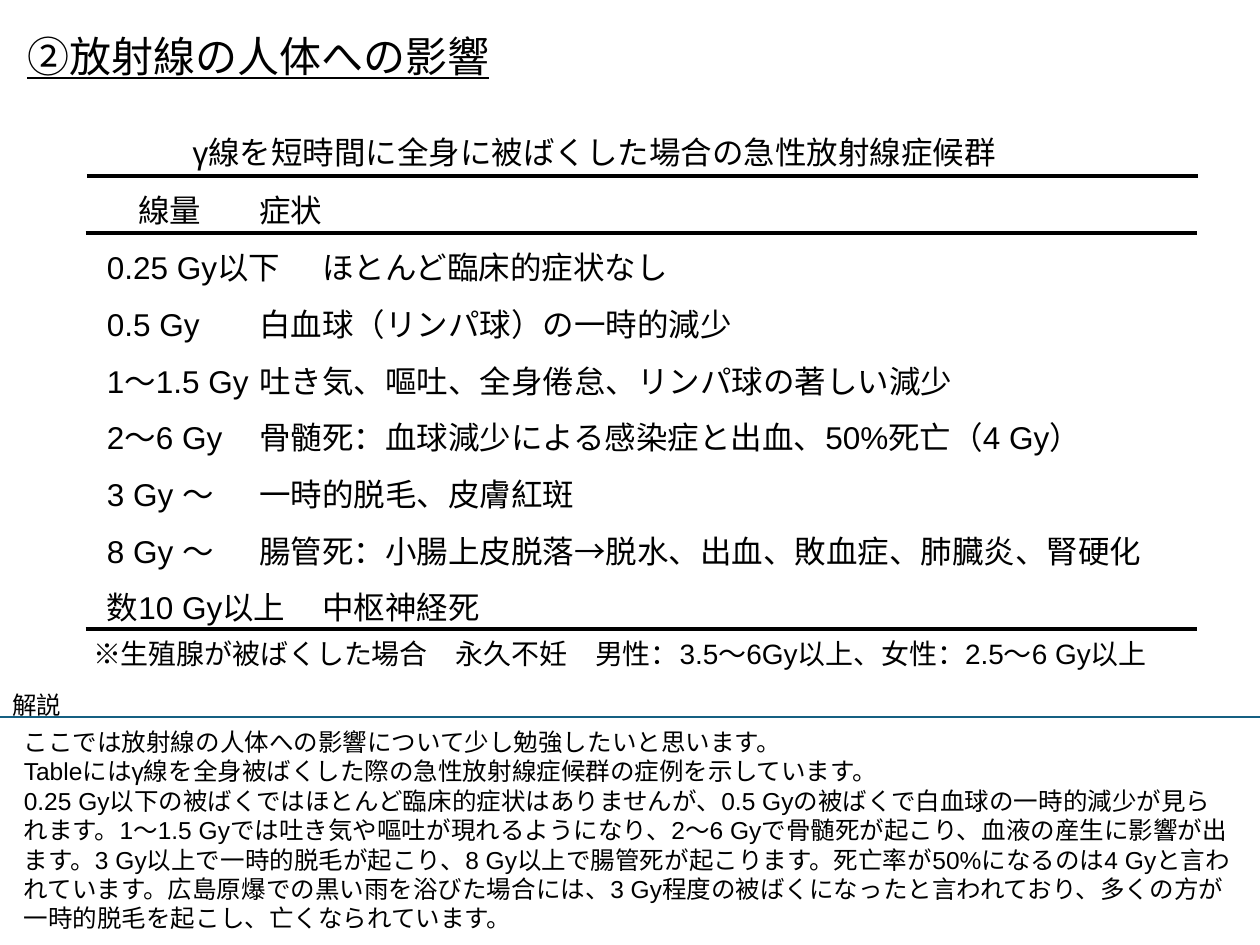
from pptx import Presentation
from pptx.dml.color import RGBColor
from pptx.enum.shapes import MSO_CONNECTOR as Connector
from pptx.enum.text import MSO_ANCHOR as Anchor, MSO_AUTO_SIZE as AutoSize
from pptx.oxml.ns import qn
from pptx.util import Inches, Pt
from lxml.etree import SubElement

COLORS = {"text": "000000", "rule": "000000", "divider": "156082"}
FONT = "Arial"

HEADER = "線量\t症状"
SYMPTOMS = [
    ("0.25 Gy以下", "ほとんど臨床的症状なし"),
    ("0.5 Gy", "白血球（リンパ球）の一時的減少"),
    ("1～1.5 Gy", "吐き気、嘔吐、全身倦怠、リンパ球の著しい減少"),
    ("2～6 Gy", "骨髄死：血球減少による感染症と出血、50%死亡（4 Gy）"),
    ("3 Gy ～", "一時的脱毛、皮膚紅斑"),
    ("8 Gy ～", "腸管死：小腸上皮脱落→脱水、出血、敗血症、肺臓炎、腎硬化"),
    ("数10 Gy以上", "中枢神経死"),
]
COMMENTARY = [
    "ここでは放射線の人体への影響について少し勉強したいと思います。",
    "Tableにはγ線を全身被ばくした際の急性放射線症候群の症例を示しています。",
    "0.25 Gy以下の被ばくではほとんど臨床的症状はありませんが、"
    "0.5 Gyの被ばくで白血球の一時的減少が見られます。"
    "1～1.5 Gyでは吐き気や嘔吐が現れるようになり、"
    "2～6 Gyで骨髄死が起こり、血液の産生に影響が出ます。"
    "3 Gy以上で一時的脱毛が起こり、8 Gy以上で腸管死が起こります。"
    "死亡率が50%になるのは4 Gyと言われています。"
    "広島原爆での黒い雨を浴びた場合には、3 Gy程度の被ばくになったと言われており、"
    "多くの方が一時的脱毛を起こし、亡くなられています。",
]


def add_text(page, bounds, lines, size, wrap=False, spacing=None, underline=None):
    box = page.shapes.add_textbox(*map(Inches, bounds))
    frame = box.text_frame
    frame.text = "\n".join(lines)
    frame.word_wrap = wrap
    frame.auto_size = AutoSize.SHAPE_TO_FIT_TEXT
    for para in frame.paragraphs:
        para.line_spacing = spacing
        for span in para.runs:
            span.font.name = FONT
            span.font.size = Pt(size)
            span.font.underline = underline
            span.font.color.rgb = RGBColor.from_string(COLORS["text"])
    return frame


def set_columns(para, indent, tab):
    props = para._p.get_or_add_pPr()
    props.set("marL", "0")
    props.set("indent", str(Inches(indent)))
    stops = SubElement(props, qn("a:tabLst"))
    SubElement(stops, qn("a:tab"), pos=str(Inches(tab)), algn="l")


def add_symptom_list(page):
    rows = [HEADER] + ["\t".join(row) for row in SYMPTOMS]
    frame = add_text(page, (0.46, 1.32, 9.29, 3.7), rows, 18, spacing=1.5)
    frame.vertical_anchor = Anchor.MIDDLE
    header, *body = frame.paragraphs
    set_columns(header, 0.54, 2.29)
    for para in body:
        set_columns(para, 0.29, 2)


def add_rule(page, left, top, width, color, weight):
    rule = page.shapes.add_connector(
        Connector.STRAIGHT, Inches(left), Inches(top), Inches(left + width), Inches(top))
    rule.line.color.rgb = RGBColor.from_string(COLORS[color])
    rule.line.width = Pt(weight)
    SubElement(rule._element.spPr, qn("a:effectLst"))


def main():
    deck = Presentation()
    deck.slide_width, deck.slide_height = Inches(10), Inches(7.5)
    page = deck.slides.add_slide(deck.slide_layouts[6])

    add_text(page, (0.12, 0.19, 3.9, 0.5), ["②放射線の人体への影響"], 24, underline=True)
    add_rule(page, 0, 5.69, 10, "divider", 1.5)
    add_text(page, (0, 5.31, 0.59, 0.42), ["解説"], 14, spacing=1.5)
    add_text(page, (0.09, 5.72, 9.81, 1.75), COMMENTARY, 14, wrap=True)

    add_symptom_list(page)
    add_text(page, (0.64, 5, 8.87, 0.37),
             ["※生殖腺が被ばくした場合　永久不妊　男性：3.5～6Gy以上、女性：2.5～6 Gy以上"],
             16, wrap=True)
    for left, top in ((0.69, 1.4), (0.68, 1.85), (0.68, 4.99)):
        add_rule(page, left, top, 8.82, "rule", 2.25)
    add_text(page, (1.43, 1.01, 6.89, 0.4),
             ["γ線を短時間に全身に被ばくした場合の急性放射線症候群"], 18)

    deck.save("out.pptx")


if __name__ == "__main__":
    main()
